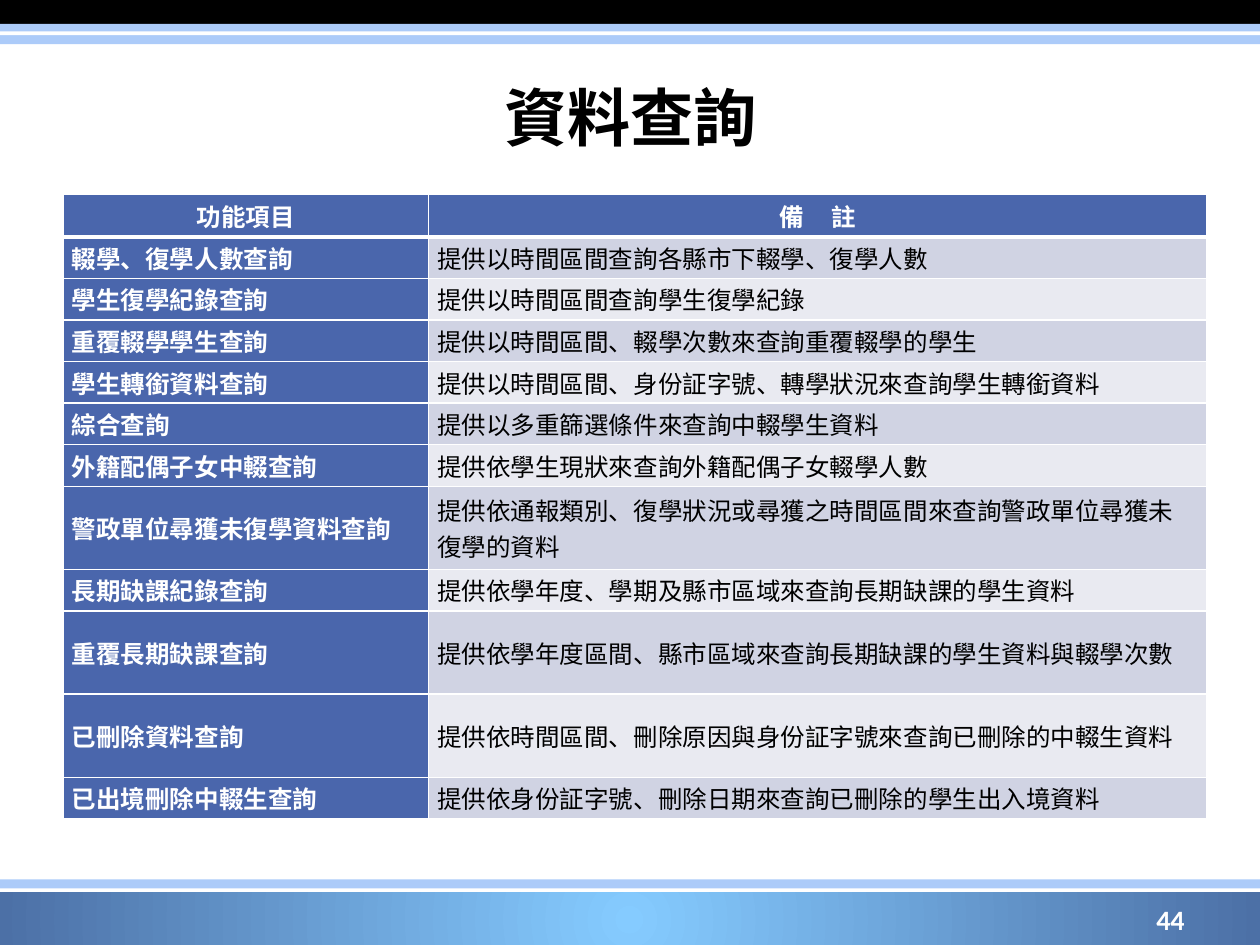
from dataclasses import dataclass

from lxml.etree import SubElement
from pptx import Presentation
from pptx.dml.color import RGBColor
from pptx.enum.shapes import MSO_SHAPE
from pptx.enum.text import MSO_ANCHOR, PP_ALIGN
from pptx.oxml.ns import qn
from pptx.util import Inches, Pt

WHITE, BLACK, HEADER_BLUE, PALE_BLUE = "FFFFFF", "000000", "4A66AC", "ACCBF9"
BANDS = ("D0D3E3", "E9EAF1")
ROW_HEIGHT = 0.33


@dataclass
class Bar:
    left: float
    top: float
    width: float
    height: float
    color: str


@dataclass
class Query:
    name: str
    note: str
    lines: int = 1


TOP_BARS = [
    Bar(0, 0, 10, 0.19, BLACK),
    Bar(0, 0.19, 10, 0.16, PALE_BLUE),
    Bar(0, 0.25, 10, 0.03, WHITE),
]
FOOTER_BAR = Bar(-0.01, 7.07, 10.01, 0.46, "85CBFF")
FOOTER_LINES = [
    Bar(-0.01, 6.98, 10.01, 0.1, PALE_BLUE),
    Bar(-0.01, 7.05, 10.01, 0.03, WHITE),
]
QUERIES = [
    Query("輟學、復學人數查詢", "提供以時間區間查詢各縣市下輟學、復學人數"),
    Query("學生復學紀錄查詢", "提供以時間區間查詢學生復學紀錄"),
    Query("重覆輟學學生查詢", "提供以時間區間、輟學次數來查詢重覆輟學的學生"),
    Query("學生轉銜資料查詢", "提供以時間區間、身份証字號、轉學狀況來查詢學生轉銜資料"),
    Query("綜合查詢", "提供以多重篩選條件來查詢中輟學生資料"),
    Query("外籍配偶子女中輟查詢", "提供依學生現狀來查詢外籍配偶子女輟學人數"),
    Query("警政單位尋獲未復學資料查詢",
          "提供依通報類別、復學狀況或尋獲之時間區間來查詢警政單位尋獲未復學的資料", 2),
    Query("長期缺課紀錄查詢", "提供依學年度、學期及縣市區域來查詢長期缺課的學生資料"),
    Query("重覆長期缺課查詢", "提供依學年度區間、縣市區域來查詢長期缺課的學生資料與輟學次數", 2),
    Query("已刪除資料查詢", "提供依時間區間、刪除原因與身份証字號來查詢已刪除的中輟生資料", 2),
    Query("已出境刪除中輟生查詢", "提供依身份証字號、刪除日期來查詢已刪除的學生出入境資料"),
]


def rgb(color: str) -> RGBColor:
    return RGBColor.from_string(color)


def set_font(p, name: str, size: float, color: str, bold: bool) -> None:
    p.font.name = name
    p.font.size = Pt(size)
    p.font.bold = bold
    p.font.color.rgb = rgb(color)


def add_bar(slide, bar: Bar):
    sp = slide.shapes.add_shape(
        MSO_SHAPE.RECTANGLE, Inches(bar.left), Inches(bar.top),
        Inches(bar.width), Inches(bar.height))
    sp.shadow.inherit = False
    sp.fill.solid()
    sp.fill.fore_color.rgb = rgb(bar.color)
    sp.line.fill.background()
    return sp


def set_radial_fill(sp, inner: str, outer: str) -> None:
    sp.fill.gradient()
    for stop, position, color in zip(sp.fill.gradient_stops, (0, 1), (inner, outer)):
        stop.position = position
        stop.color.rgb = rgb(color)
    grad = sp._element.spPr.find(qn("a:gradFill"))
    for lin in grad.findall(qn("a:lin")):
        grad.remove(lin)
    circle = SubElement(grad, qn("a:path"), {"path": "circle"})
    SubElement(circle, qn("a:fillToRect"), dict.fromkeys("ltrb", "50000"))


def set_borders(cell, bottom: float) -> None:
    tc_pr = cell._tc.get_or_add_tcPr()
    for side, width in (("L", 1), ("R", 1), ("T", 1), ("B", bottom)):
        ln = SubElement(tc_pr, qn(f"a:ln{side}"), {"w": str(Pt(width))})
        fill = SubElement(ln, qn("a:solidFill"))
        SubElement(fill, qn("a:srgbClr"), {"val": WHITE})


def fill_cell(cell, text: str, fill: str, color: str, bold: bool,
              align: PP_ALIGN = PP_ALIGN.LEFT, bottom: float = 1) -> None:
    set_borders(cell, bottom)
    cell.fill.solid()
    cell.fill.fore_color.rgb = rgb(fill)
    cell.vertical_anchor = MSO_ANCHOR.MIDDLE
    cell.margin_left = cell.margin_right = Inches(0.07)
    cell.margin_top = cell.margin_bottom = 0
    cell.text = text
    p = cell.text_frame.paragraphs[0]
    p.alignment = align
    p.space_before = p.space_after = Pt(1.2)
    set_font(p, "Arial", 14, color, bold)


def add_query_table(slide) -> None:
    heights = [0.34] + [ROW_HEIGHT * query.lines for query in QUERIES]
    table = slide.shapes.add_table(
        len(heights), 2, Inches(0.5), Inches(1.54),
        Inches(9.08), Inches(sum(heights))).table
    for column, width in zip(table.columns, (2.9, 6.18)):
        column.width = Inches(width)
    for row, height in zip(table.rows, heights):
        row.height = Inches(height)
    for col, heading in enumerate(("功能項目", "備     註")):
        fill_cell(table.cell(0, col), heading, HEADER_BLUE, WHITE, True,
                  PP_ALIGN.CENTER, 3)
    for i, query in enumerate(QUERIES):
        fill_cell(table.cell(i + 1, 0), query.name, HEADER_BLUE, WHITE, True)
        fill_cell(table.cell(i + 1, 1), query.note, BANDS[i % 2], BLACK, False)


def set_title(slide, text: str) -> None:
    title = slide.shapes.title
    title.left, title.top = Inches(0.5), Inches(0.3)
    title.width, title.height = Inches(9), Inches(1.25)
    tf = title.text_frame
    tf.text = text
    tf.vertical_anchor = MSO_ANCHOR.MIDDLE
    p = tf.paragraphs[0]
    p.alignment = PP_ALIGN.CENTER
    set_font(p, "Karla", 36, BLACK, True)


def add_page_number(slide, number: str) -> None:
    tf = slide.shapes.add_textbox(
        Inches(7.17), Inches(7.1), Inches(2.33), Inches(0.4)).text_frame
    tf.word_wrap = True
    tf.vertical_anchor = MSO_ANCHOR.MIDDLE
    p = tf.paragraphs[0]
    p.text = number
    p.alignment = PP_ALIGN.RIGHT
    set_font(p, "Calibri", 16, WHITE, True)


def main() -> None:
    prs = Presentation()
    prs.slide_width, prs.slide_height = Inches(10), Inches(7.5)
    s = prs.slides.add_slide(prs.slide_layouts[5])
    for bar in TOP_BARS:
        add_bar(s, bar)
    set_radial_fill(add_bar(s, FOOTER_BAR), FOOTER_BAR.color, "4C70A6")
    for bar in FOOTER_LINES:
        add_bar(s, bar)
    set_title(s, "資料查詢")
    add_page_number(s, "44")
    add_query_table(s)
    prs.save("out.pptx")


if __name__ == "__main__":
    main()
